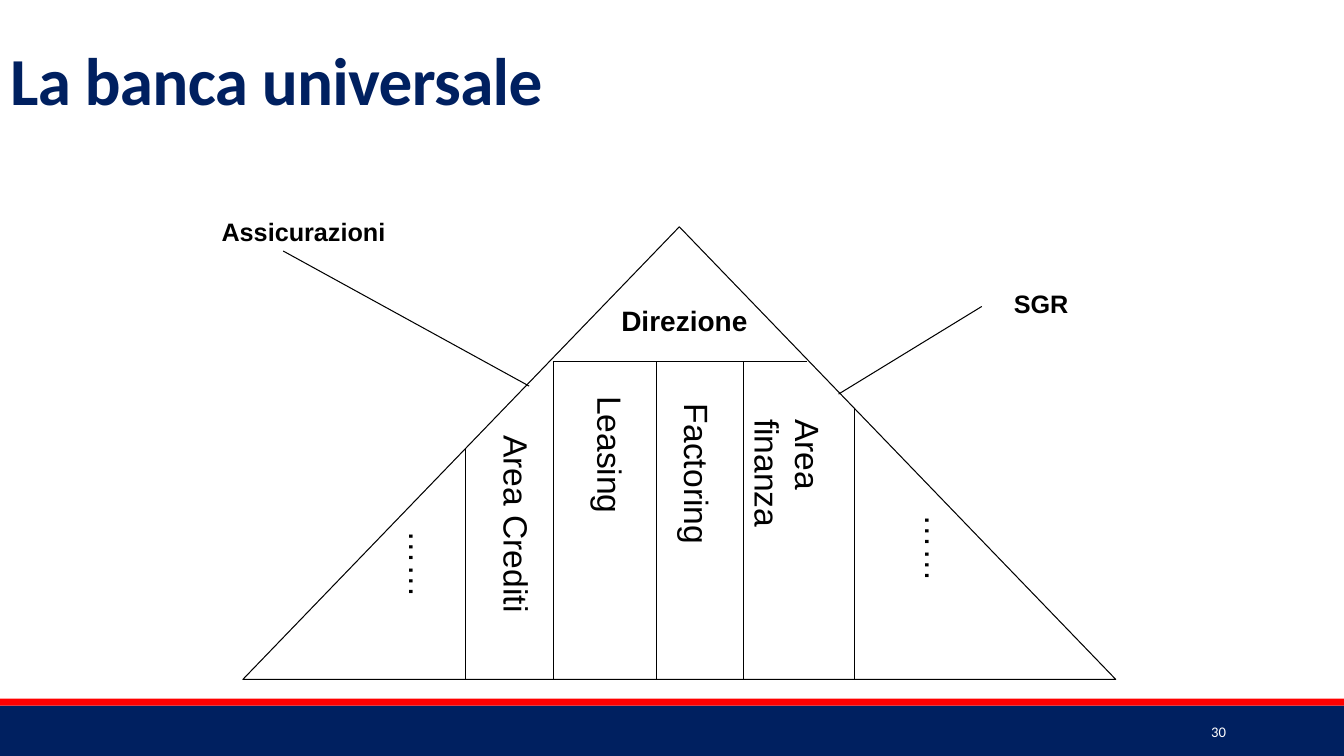
from pptx import Presentation
from pptx.dml.color import RGBColor
from pptx.enum.shapes import MSO_CONNECTOR as Connector, MSO_SHAPE as Shape
from pptx.enum.text import MSO_ANCHOR as Anchor, PP_ALIGN as Align
from pptx.oxml.ns import qn
from pptx.util import Pt
from lxml.etree import SubElement

TITLE = "La banca universale"
PAGE_NUMBER = "30"
NAVY, RED, BLACK, WHITE = "002060", "FF0000", "000000", "FFFFFF"
BASE, CEILING = 485.3, 258.5
PYRAMID = (173.5, 162, 623.5, BASE - 162)
BANDS = [(504, 36, NAVY), (499, 5, RED)]
DIVIDERS = [(332.6, 321), (395.3, CEILING), (468.7, CEILING), (531.4, CEILING), (610.6, 292.3)]
LINES = [
    (395.3, CEILING, 576.7, CEILING),
    (378, 275.8, 202.3, 179.3),
    (599, 281.5, 701.3, 218.9),
]
AREAS = [
    ("Leasing", 410.4, 275.8, 124.6),
    ("Factoring", 472.3, 281.5, 124.6),
    ("Area finanza", 551.5, 292.3, 147.6),
    ("Area Crediti", 343.4, 303.8, 147.6),
    ("……", 644.4, 360.7, 124.6),
    ("……", 275.8, 372.2, 124.6),
]
LABELS = [
    ("Direzione", (434.9, 213.1, 108, 31), 20, Align.CENTER),
    ("Assicurazioni", (151.2, 151.2, 158.4, 28.8), 18, Align.LEFT),
    ("SGR", (707, 202.3, 73.4, 28.8), 18, Align.CENTER),
]


def color(value):
    return RGBColor.from_string(value)


def points(values):
    return [Pt(value) for value in values]


def add_band(page, top, height, fill):
    band = page.shapes.add_shape(Shape.RECTANGLE, *points((0, top, 960, height)))
    band.shadow.inherit = False
    band.fill.solid()
    band.fill.fore_color.rgb = color(fill)
    band.line.fill.background()


def add_line(page, *ends):
    line = page.shapes.add_connector(Connector.STRAIGHT, *points(ends))
    line.line.color.rgb = color(BLACK)
    line.line.width = Pt(0.75)
    SubElement(line._element.spPr, qn("a:effectLst"))


def format_text(box, text, size, font="Arial", fill=BLACK, bold=False, align=Align.LEFT):
    box.text_frame.word_wrap = True
    para = box.text_frame.paragraphs[0]
    para.text = text
    para.alignment = align
    para.font.name = font
    para.font.size = Pt(size)
    para.font.bold = bold
    para.font.color.rgb = color(fill)
    return para


def add_text(page, place, text, size, **style):
    box = page.shapes.add_textbox(*points(place))
    format_text(box, text, size, **style)
    return box


def add_title(page):
    title = page.shapes.title
    title.left, title.top, title.width, title.height = points((0, 30.2, 648, 61.2))
    title.text_frame.vertical_anchor = Anchor.MIDDLE
    para = format_text(title, TITLE, 48, font="Calibri", fill=NAVY, bold=True)
    para.line_spacing = 0.85
    para.runs[0]._r.get_or_add_rPr().set("spc", "-50")


def add_pyramid(page):
    pyramid = page.shapes.add_shape(Shape.ISOSCELES_TRIANGLE, *points(PYRAMID))
    pyramid.shadow.inherit = False
    pyramid.fill.background()
    pyramid.line.color.rgb = color(BLACK)
    pyramid.line.width = Pt(0.75)
    for x, top in DIVIDERS:
        add_line(page, x, top, x, BASE)
    for ends in LINES:
        add_line(page, *ends)
    for text, left, top, height in AREAS:
        box = add_text(page, (left, top, 43.9, height), text, 24)
        box.text_frame._txBody.bodyPr.set("vert", "eaVert")
    for text, place, size, align in LABELS:
        add_text(page, place, text, size, bold=True, align=align)


def main():
    deck = Presentation()
    deck.slide_width, deck.slide_height = points((960, 540))
    page = deck.slides.add_slide(deck.slide_layouts[5])
    for band in BANDS:
        add_band(page, *band)
    number = add_text(page, (779.8, 508.3, 103, 28.8), PAGE_NUMBER, 10.5,
                      font="Calibri", fill=WHITE, align=Align.RIGHT)
    number.text_frame.vertical_anchor = Anchor.MIDDLE
    add_title(page)
    add_pyramid(page)
    deck.save("out.pptx")


if __name__ == "__main__":
    main()
